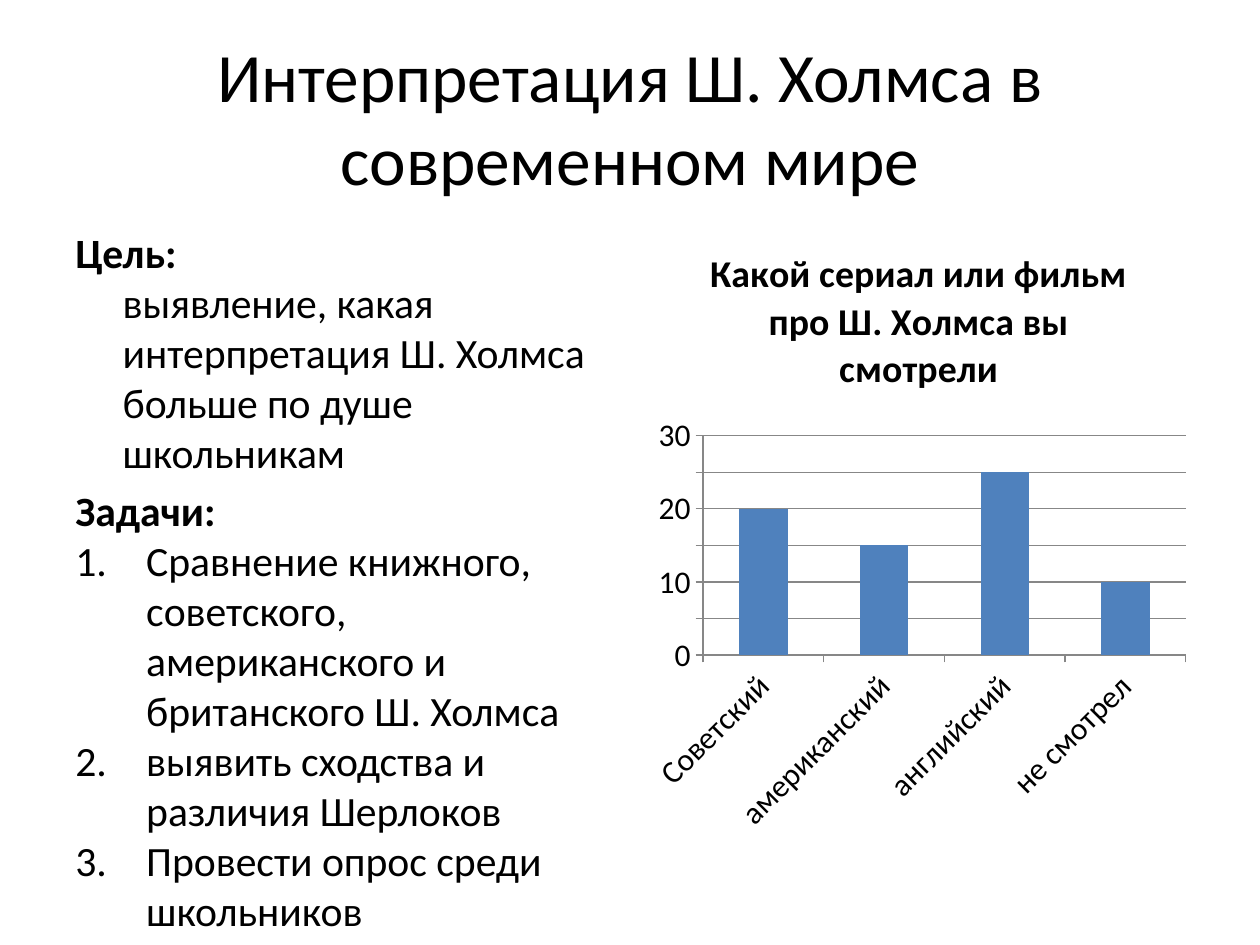
from lxml import etree
from pptx import Presentation
from pptx import util as u
from pptx.chart.data import CategoryChartData
from pptx.dml.color import RGBColor
from pptx.enum import chart as charts, text
from pptx.oxml.ns import qn

Pt = u.Pt
FONT = "Calibri"
BLACK = RGBColor(0x00, 0x00, 0x00)
BLUE = RGBColor(0x4F, 0x81, 0xBD)
GRAY = RGBColor(0x87, 0x87, 0x87)
MARGIN, BODY_TOP, COLUMN_WIDTH, BODY_HEIGHT = 36, 126, 318, 356.4
BODY_SIZE = 23.8
TASKS = [
    "Сравнение книжного, советского, \nамериканского и британского Ш. Холмса",
    "выявить сходства и различия Шерлоков",
    "Провести опрос среди школьников",
]
ANSWERS = {"Советский": 20, "американский": 15, "английский": 25, "не смотрел": 10}


def style_font(font, size, bold=False):
    font.name = FONT
    font.size = Pt(size)
    font.bold = bold
    font.color.rgb = BLACK


def add_text_frame(slide, left, top, width, height):
    frame = slide.shapes.add_textbox(Pt(left), Pt(top), Pt(width), Pt(height)).text_frame
    frame.word_wrap = True
    return frame


def add_run(paragraph, content, size, bold=False):
    """Add content to the paragraph, turning newlines into line breaks."""
    for index, line in enumerate(content.split("\n")):
        if index:
            paragraph.add_line_break()
        if line:
            run = paragraph.add_run()
            run.text = line
            style_font(run.font, size, bold)


def set_hanging_indent(paragraph, indent):
    properties = paragraph._p.get_or_add_pPr()
    properties.set("marL", str(Pt(indent)))
    properties.set("indent", str(-Pt(indent)))
    return properties


def add_title(slide):
    frame = add_text_frame(slide, MARGIN, 21.6, 648, 90)
    frame.vertical_anchor = text.MSO_ANCHOR.MIDDLE
    paragraph = frame.paragraphs[0]
    paragraph.alignment = text.PP_ALIGN.CENTER
    add_run(paragraph, "Интерпретация Ш. Холмса в современном мире", 39.6)


def add_goals(slide):
    frame = add_text_frame(slide, MARGIN, BODY_TOP, COLUMN_WIDTH, BODY_HEIGHT)
    goal = frame.paragraphs[0]
    add_run(goal, "Цель: \n", BODY_SIZE, bold=True)
    add_run(goal, "выявление, какая интерпретация Ш. Холмса больше по душе школьникам", BODY_SIZE)
    heading = frame.add_paragraph()
    add_run(heading, "Задачи:", BODY_SIZE, bold=True)
    for paragraph in (goal, heading):
        paragraph.space_before = Pt(4.8)
        set_hanging_indent(paragraph, 27)
    for task in TASKS:
        paragraph = frame.add_paragraph()
        paragraph.space_before = Pt(0)
        properties = set_hanging_indent(paragraph, 40.5)
        etree.SubElement(properties, qn("a:buFont"), typeface="+mj-lt")
        etree.SubElement(properties, qn("a:buAutoNum"), type="arabicPeriod")
        add_run(paragraph, task, BODY_SIZE)


def style_axis(axis):
    axis.major_tick_mark = charts.XL_TICK_MARK.OUTSIDE
    axis.minor_tick_mark = charts.XL_TICK_MARK.NONE
    axis.format.line.color.rgb = GRAY
    style_font(axis.tick_labels.font, 18)


def add_survey_chart(slide):
    data = CategoryChartData()
    data.categories = list(ANSWERS)
    data.add_series("Series 1", list(ANSWERS.values()))
    left = 720 - MARGIN - COLUMN_WIDTH
    chart = slide.shapes.add_chart(
        charts.XL_CHART_TYPE.COLUMN_CLUSTERED,
        Pt(left), Pt(BODY_TOP), Pt(COLUMN_WIDTH), Pt(BODY_HEIGHT), data).chart
    style_font(chart.font, 18)
    chart.has_legend = False
    chart.has_title = True
    add_run(chart.chart_title.text_frame.paragraphs[0],
            "Какой сериал или фильм про Ш. Холмса вы смотрели", 21.6, bold=True)
    chart.chart_title.include_in_layout = False

    plot = chart.plots[0]
    plot.gap_width = 150
    plot.vary_by_categories = False
    fill = plot.series[0].format.fill
    fill.solid()
    fill.fore_color.rgb = BLUE

    for axis in (chart.category_axis, chart.value_axis):
        style_axis(axis)
    label_body = chart.category_axis._element.find(qn("c:txPr")).find(qn("a:bodyPr"))
    label_body.set("rot", str(-45 * 60000))
    value_axis = chart.value_axis
    value_axis.minimum_scale, value_axis.maximum_scale = 0, 30
    value_axis.major_unit = 5
    value_axis.has_major_gridlines = True
    value_axis.major_gridlines.format.line.color.rgb = GRAY


def main():
    presentation = Presentation()
    presentation.slide_width, presentation.slide_height = Pt(720), Pt(540)
    slide = presentation.slides.add_slide(presentation.slide_layouts[6])
    add_title(slide)
    add_goals(slide)
    add_survey_chart(slide)
    presentation.save("out.pptx")


if __name__ == "__main__":
    main()
